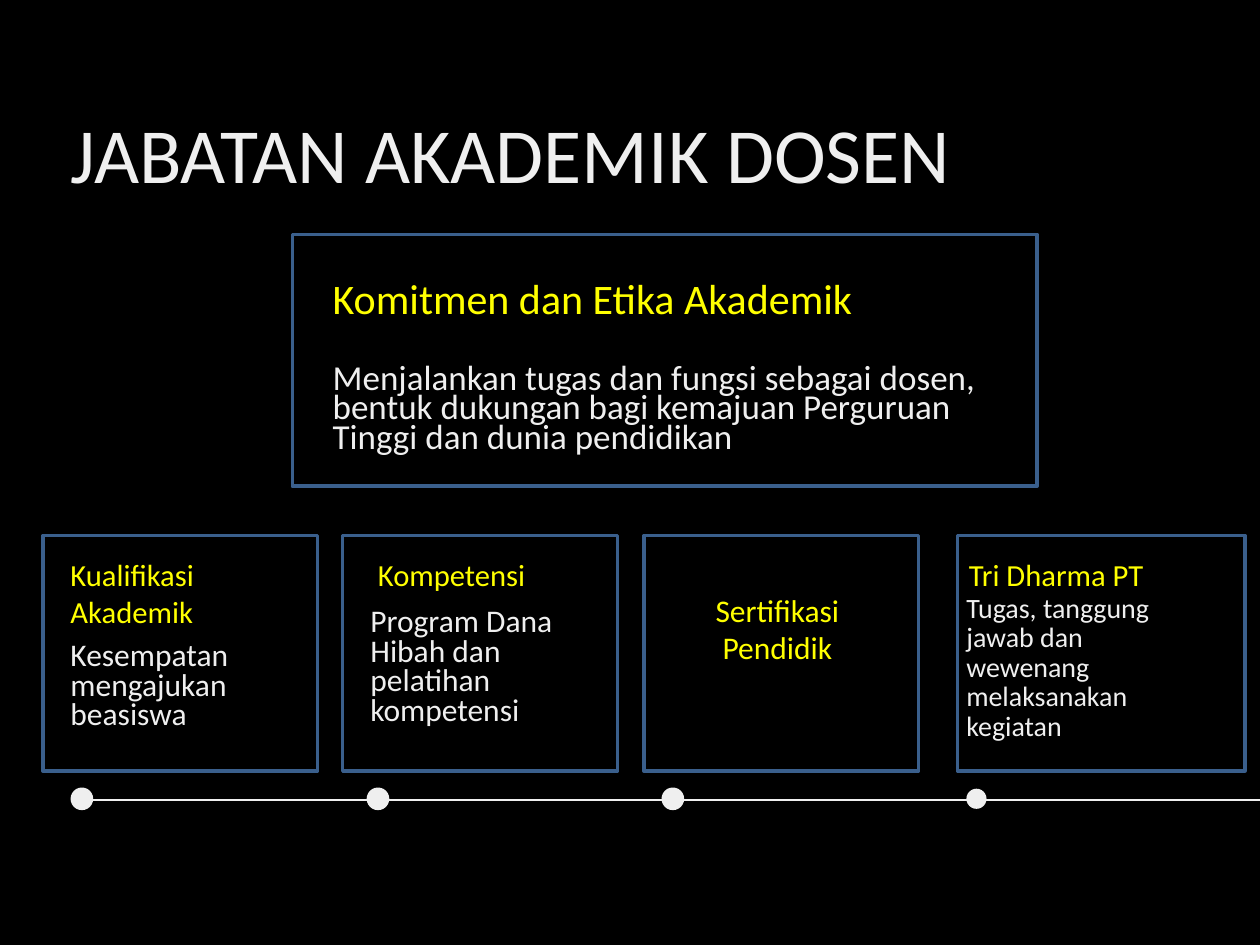
from pptx import Presentation
from pptx.dml.color import RGBColor
from pptx.enum.shapes import MSO_CONNECTOR as CONN, MSO_SHAPE as SHAPE
from pptx.enum.text import MSO_ANCHOR as ANCHOR, PP_ALIGN as ALIGN
from pptx.oxml.ns import qn
from pptx.util import Inches, Pt
from lxml.etree import SubElement

W, H = 10, 7.5
FONT = "Calibri"
COLORS = {"back": "000000", "body": "EFEFEF", "heading": "FFFF00", "border": "3A5F8C"}

BOX_TOP, BOX_H = 4.25, 1.87
HEAD_TOP, TEXT_W = 4.41, 1.84
HEAD_STEP, BODY_STEP = 21, 16.8
HEAD_LINE = 0.29
AXIS_Y = 6.34

# left and width of each box along the timeline
BOXES = [(0.34, 2.18), (2.72, 2.18), (5.11, 2.18), (7.6, 2.28)]
# centre and diameter of each timeline dot
DOTS = [(0.65, 0.18), (3, 0.18), (5.34, 0.18), (7.75, 0.16)]
# text, left, top, lines, format
HEADINGS = [
    ("Kualifikasi Akademik", 0.56, HEAD_TOP, 2, {}),
    ("Kompetensi", 3, HEAD_TOP, 1, {}),
    ("Sertifikasi Pendidik", 5.25, HEAD_TOP + HEAD_LINE, 2,
     {"size": 18, "align": ALIGN.CENTER}),
    ("Tri Dharma PT", 7.69, HEAD_TOP, 1, {}),
]
# text, left, top, height, size
BODIES = [
    ("Kesempatan mengajukan beasiswa", 0.56, 5.11, 0.72, 18),
    ("Program Dana Hibah dan pelatihan kompetensi", 2.94, 4.84, 0.95, 18),
    ("Tugas, tanggung jawab dan wewenang melaksanakan kegiatan", 7.67, 4.72, 1.19, 16),
]


def rgb(name):
    return RGBColor.from_string(COLORS[name])


def write(tf, text, size=18, color="body", step=BODY_STEP, align=ALIGN.LEFT):
    """Fill a text frame without margins; step is the line spacing in points."""
    tf.word_wrap = True
    tf.vertical_anchor = ANCHOR.TOP
    tf.margin_left = tf.margin_right = tf.margin_top = tf.margin_bottom = 0
    p = tf.paragraphs[0]
    p.alignment = align
    p.line_spacing = Pt(step)
    r = p.add_run()
    r.text = text
    r.font.name = FONT
    r.font.size = Pt(size)
    r.font.color.rgb = rgb(color)


def add_text(s, text, x, y, w, h, **fmt):
    tb = s.shapes.add_textbox(*map(Inches, (x, y, w, h)))
    write(tb.text_frame, text, **fmt)


def add_heading(s, text, x, y, w, lines=1, size=17.5, **fmt):
    add_text(s, text, x, y, w, lines * HEAD_LINE,
             size=size, color="heading", step=HEAD_STEP, **fmt)


def add_title(s, text):
    sp = s.shapes.title
    sp.left, sp.top, sp.width, sp.height = map(Inches, (0.56, 0.84, 8.88, 0.76))
    write(sp.text_frame, text, size=44.6, step=53.5)


def add_box(s, x, y, w, h):
    sp = s.shapes.add_shape(SHAPE.RECTANGLE, *map(Inches, (x, y, w, h)))
    sp.shadow.inherit = False
    sp.fill.background()
    sp.line.color.rgb = rgb("border")
    sp.line.width = Pt(2)


def add_dot(s, cx, d):
    sp = s.shapes.add_shape(SHAPE.OVAL, *map(Inches, (cx - d / 2, AXIS_Y - d / 2, d, d)))
    sp.shadow.inherit = False
    sp.fill.solid()
    sp.fill.fore_color.rgb = rgb("body")
    sp.line.fill.background()


def add_timeline(s):
    cx, d = DOTS[0]
    y = AXIS_Y + 0.01
    line = s.shapes.add_connector(CONN.STRAIGHT, *map(Inches, (cx + d / 2, y, W, y)))
    line.line.color.rgb = rgb("body")
    line.line.width = Pt(0.75)
    SubElement(line._element.spPr, qn("a:effectLst"))
    for dot in DOTS:
        add_dot(s, *dot)


def main():
    prs = Presentation()
    prs.slide_width, prs.slide_height = Inches(W), Inches(H)
    s = prs.slides.add_slide(prs.slide_layouts[5])
    s.background.fill.solid()
    s.background.fill.fore_color.rgb = rgb("back")

    add_timeline(s)
    add_title(s, "JABATAN AKADEMIK DOSEN")

    for text, x, y, lines, fmt in HEADINGS:
        add_heading(s, text, x, y, TEXT_W, lines, **fmt)
    for text, x, y, h, size in BODIES:
        add_text(s, text, x, y, TEXT_W, h, size=size)

    add_text(s, "Menjalankan tugas dan fungsi sebagai dosen, bentuk dukungan bagi "
             "kemajuan Perguruan Tinggi dan dunia pendidikan",
             2.64, 2.92, 5.51, 0.72, size=20)
    add_heading(s, "Komitmen dan Etika Akademik", 2.64, 1.98 + HEAD_LINE, 5.51, size=24)

    add_box(s, 2.32, 1.86, 5.91, 2)
    for x, w in BOXES:
        add_box(s, x, BOX_TOP, w, BOX_H)

    prs.save("out.pptx")


if __name__ == "__main__":
    main()
